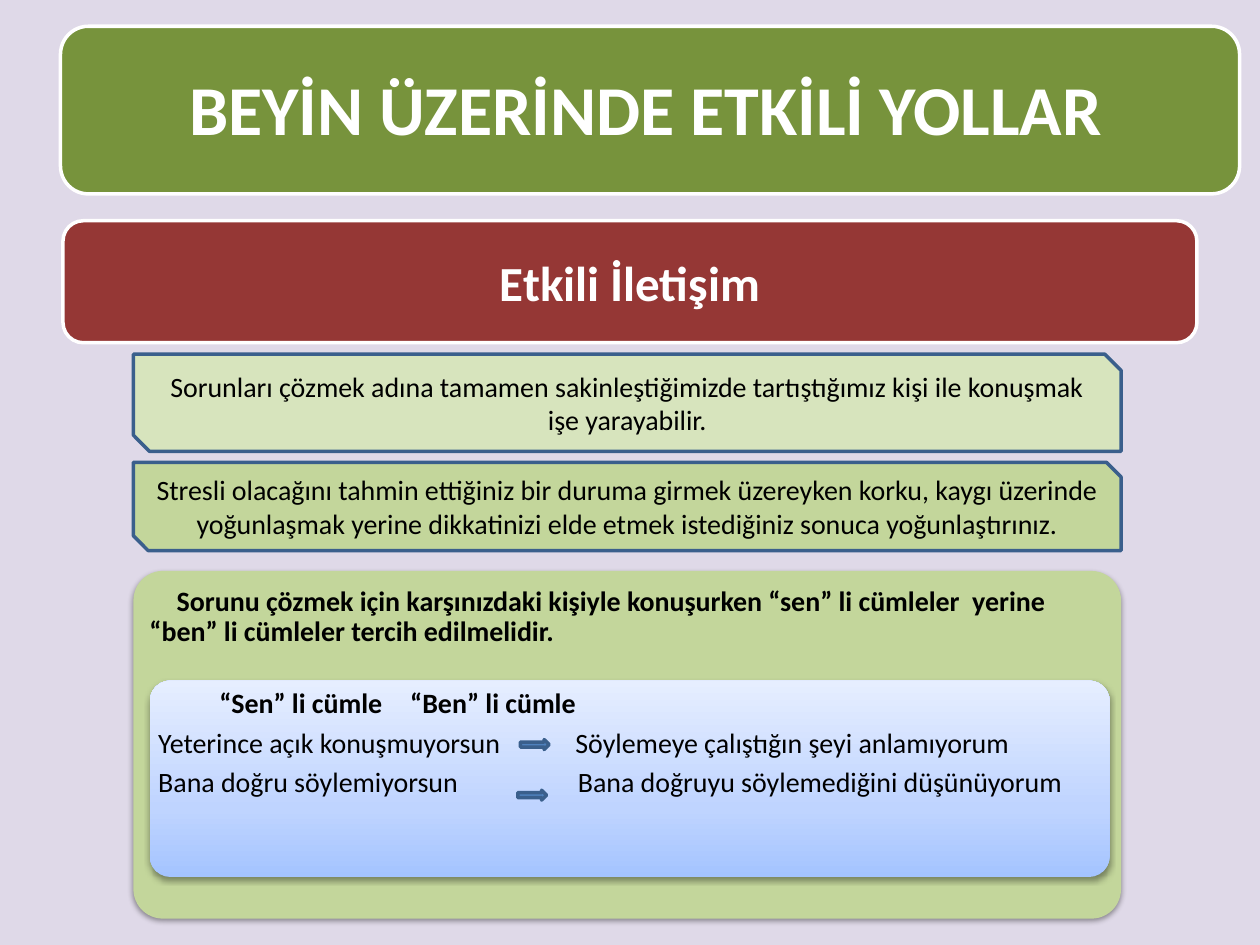
from copy import deepcopy

from lxml.etree import SubElement
from pptx import Presentation
from pptx.dml.color import RGBColor
from pptx.enum.shapes import MSO_SHAPE
from pptx.enum.text import MSO_ANCHOR, PP_ALIGN
from pptx.oxml.ns import qn
from pptx.util import Cm, Pt

TITLE = "BEYİN ÜZERİNDE ETKİLİ YOLLAR"
SUBTITLE = "Etkili İletişim"
# text, top, height, fill
TIPS = [
    ("Sorunları çözmek adına tamamen sakinleştiğimizde tartıştığımız kişi ile "
     "konuşmak işe yarayabilir.", 7.14, 1.96, "D7E4BD"),
    ("Stresli olacağını tahmin ettiğiniz bir duruma girmek üzereyken korku, kaygı "
     "üzerinde yoğunlaşmak yerine dikkatinizi elde etmek istediğiniz sonuca "
     "yoğunlaştırınız.", 9.32, 1.78, "C3D69B"),
]
ADVICE = ("Sorunu çözmek için karşınızdaki kişiyle konuşurken “sen” li cümleler  "
          "yerine “ben” li cümleler tercih edilmelidir.")
# you-sentence, I-sentence, first-line indent, tab stop, bold
SENTENCES = [
    ("“Sen” li cümle", "“Ben” li cümle", 1.23, 10.87, True),
    ("Yeterince açık konuşmuyorsun", "Söylemeye çalıştığın şeyi anlamıyorum",
     0, 8.41, False),
    ("Bana doğru söylemiyorsun", "Bana doğruyu söylemediğini düşünüyorum",
     0, 8.46, False),
]
ARROWS = [(10.49, 14.91), (10.44, 15.93)]
GRADIENT = [(0, "A4C4FF"), (0.35, "BFD4FF"), (1, "E6EEFF")]
CONTENT_LEFT, CONTENT_WIDTH = 2.69, 19.91
OUTLINE = "3A5F8C"


def rgb(value):
    return RGBColor.from_string(value)


def add_box(slide, kind, box, fill=None, line=None, radius=None):
    sp = slide.shapes.add_shape(kind, *map(Cm, box))
    sp.shadow.inherit = False
    if fill:
        sp.fill.solid()
        sp.fill.fore_color.rgb = rgb(fill)
    if line:
        sp.line.color.rgb = rgb(line)
        sp.line.width = Pt(2)
    else:
        sp.line.fill.background()
    if radius:
        sp.adjustments[0] = radius
    return sp


def add_shadow(sp):
    effects = sp._element.spPr.find(qn("a:effectLst"))
    shadow = SubElement(effects, qn("a:outerShdw"), blurRad=str(Pt(3.1)),
                        dist=str(Pt(1.6)), dir="5400000", rotWithShape="0")
    color = SubElement(shadow, qn("a:srgbClr"), val="000000")
    SubElement(color, qn("a:alpha"), val="38000")


def fill_gradient(sp, stops):
    """Fill from bottom to top with any number of stops above one."""
    sp.fill.gradient()
    sp.fill.gradient_angle = 90
    stop_list = sp._element.spPr.find(".//" + qn("a:gsLst"))
    for _ in stops[2:]:
        stop_list.append(deepcopy(stop_list[0]))
    for stop, (position, color) in zip(sp.fill.gradient_stops, stops):
        stop.position = position
        stop.color.rgb = rgb(color)


def set_insets(tf, side, top):
    tf.margin_left = tf.margin_right = Cm(side)
    tf.margin_top = tf.margin_bottom = Cm(top)


def format_paragraph(p, size=16, color="000000", bold=False,
                     align=PP_ALIGN.LEFT, indent=0, spacing=None):
    p.alignment = align
    if spacing:
        p.line_spacing = spacing
        p.space_after = Pt(5.5)
    if indent:
        p._p.get_or_add_pPr().set("indent", str(Cm(indent)))
    for r in p.runs:
        r.font.name = "Calibri"
        r.font.size = Pt(size)
        r.font.bold = bold
        r.font.color.rgb = rgb(color)


def add_tab_stop(p, position):
    tabs = SubElement(p._p.get_or_add_pPr(), qn("a:tabLst"))
    SubElement(tabs, qn("a:tab"), pos=str(Cm(position)), algn="l")


def add_headings(slide):
    add_box(slide, MSO_SHAPE.ROUNDED_RECTANGLE, (1.22, 0.53, 23.77, 3.38),
            "77933C", "FFFFFF")
    title = slide.shapes.title
    title.left, title.top, title.width, title.height = map(
        Cm, (3.56, 1.19, 19.1, 1.96))
    tf = title.text_frame
    tf.text = TITLE
    tf.word_wrap = False
    tf.vertical_anchor = MSO_ANCHOR.MIDDLE
    format_paragraph(tf.paragraphs[0], 40, "FFFFFF", True)
    slide.shapes._spTree.append(title._element)  # in front of its banner

    sp = add_box(slide, MSO_SHAPE.ROUNDED_RECTANGLE, (1.27, 4.45, 22.86, 2.46),
                 "953735", "FFFFFF")
    sp.text_frame.text = SUBTITLE
    format_paragraph(sp.text_frame.paragraphs[0], 28, "FFFFFF", True,
                     PP_ALIGN.CENTER)


def add_tips(slide):
    for text, top, height, fill in TIPS:
        sp = add_box(slide, MSO_SHAPE.SNIP_2_DIAG_RECTANGLE,
                     (CONTENT_LEFT, top, CONTENT_WIDTH, height), fill, OUTLINE)
        sp.text_frame.text = text
        format_paragraph(sp.text_frame.paragraphs[0], align=PP_ALIGN.CENTER)


def add_advice(slide):
    panel = add_box(slide, MSO_SHAPE.ROUNDED_RECTANGLE,
                    (CONTENT_LEFT, 11.51, CONTENT_WIDTH, 7.01), "C3D69B",
                    radius=0.085)
    add_shadow(panel)
    tf = panel.text_frame
    tf.text = ADVICE
    tf.vertical_anchor = MSO_ANCHOR.TOP
    set_insets(tf, 0.15, 0.15)
    format_paragraph(tf.paragraphs[0], bold=True, indent=0.55, spacing=0.9)

    examples = add_box(slide, MSO_SHAPE.ROUNDED_RECTANGLE,
                       (3.02, 13.72, 19.35, 3.96), radius=0.105)
    fill_gradient(examples, GRADIENT)
    add_shadow(examples)
    tf = examples.text_frame
    tf.text = "\n".join(f"{you}\t{me}" for you, me, *_ in SENTENCES)
    tf.vertical_anchor = MSO_ANCHOR.TOP
    set_insets(tf, 0.05, 0.05)
    for p, (_, _, indent, tab, bold) in zip(tf.paragraphs, SENTENCES):
        format_paragraph(p, bold=bold, indent=indent, spacing=0.9)
        add_tab_stop(p, tab)

    for left, top in ARROWS:
        add_box(slide, MSO_SHAPE.RIGHT_ARROW, (left, top, 0.58, 0.2),
                "4F81BD", OUTLINE)


def main():
    prs = Presentation()
    prs.slide_width, prs.slide_height = Cm(25.4), Cm(19.05)
    slide = prs.slides.add_slide(prs.slide_layouts[5])
    slide.background.fill.solid()
    slide.background.fill.fore_color.rgb = rgb("DFD9E8")
    add_headings(slide)
    add_tips(slide)
    add_advice(slide)
    prs.save("out.pptx")


if __name__ == "__main__":
    main()
